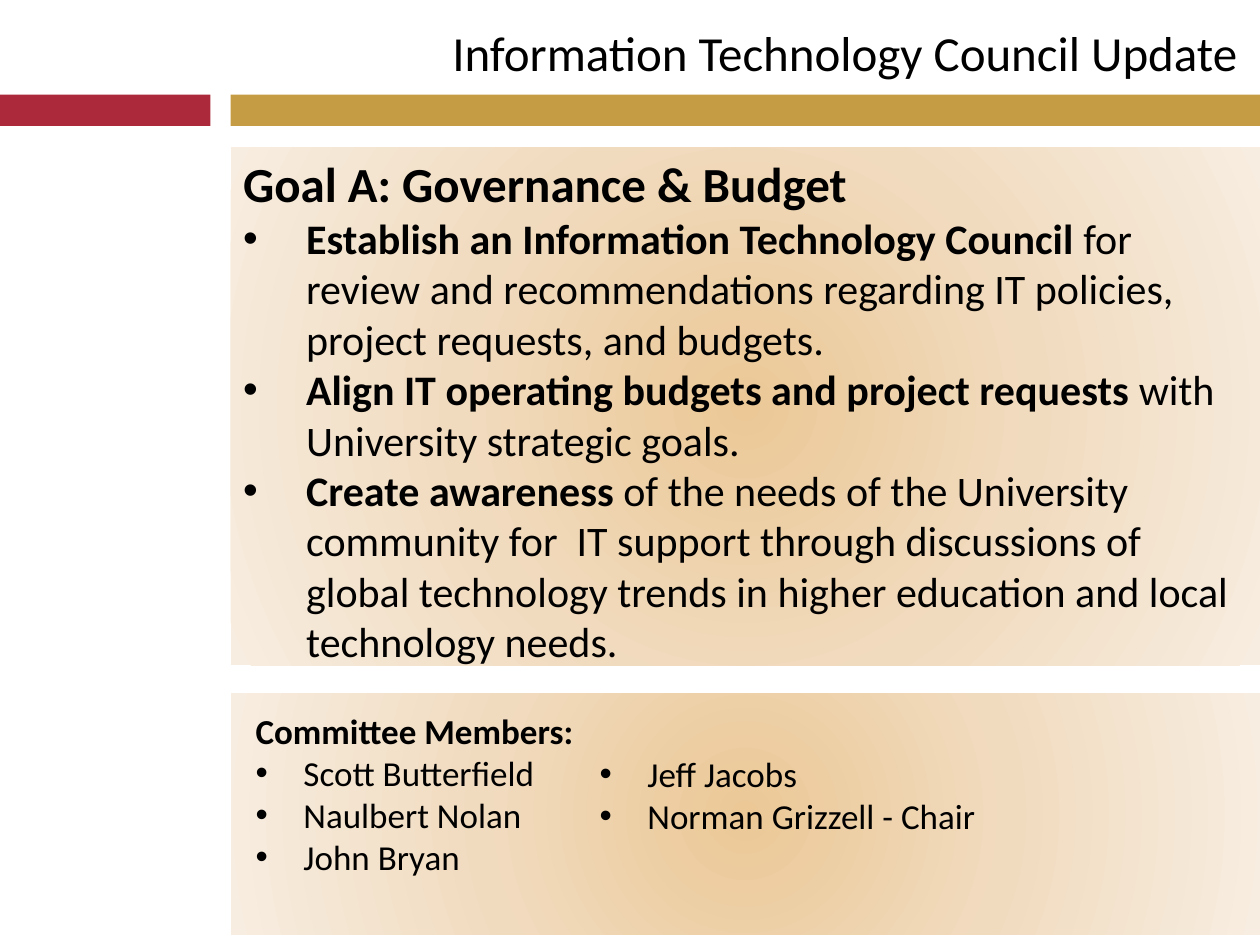
"""Build the Information Technology Council update slide."""
from pptx import Presentation
from pptx.dml.color import RGBColor
from pptx.enum.shapes import MSO_SHAPE
from pptx.enum.text import MSO_ANCHOR, MSO_AUTO_SIZE, PP_ALIGN
from pptx.oxml import parse_xml
from pptx.oxml.ns import nsdecls, qn
from pptx.util import Inches, Pt

TITLE = "Information Technology Council Update"
GOAL_HEADING = "Goal A: Governance & Budget"
GOALS = [
    ("Establish an Information Technology Council ",
     "for review and recommendations regarding IT policies, project requests, and budgets."),
    ("Align IT operating budgets and project requests ",
     "with University strategic goals."),
    ("Create awareness ",
     "of the needs of the University community for  IT support through discussions of "
     "global technology trends in higher education and local technology needs."),
]
MEMBERS_HEADING = "Committee Members:"
MEMBERS = [["Scott Butterfield", "Naulbert Nolan", "John Bryan"],
           ["Jeff Jacobs", "Norman Grizzell - Chair"]]

THEME = {
    "font": "Calibri", "text": "000000", "gold": "C59C44", "red": "AC283B",
    "glow": [(0, "EBC896"), (50, "F1DBBF"), (100, "F7EDE0")],
    "heading": 28, "goal": 24, "member": 20,
}
WIDTH, HEIGHT = 10, 7.5
MAIN_LEFT, RED_WIDTH = 1.83, 1.67
MAIN_WIDTH = WIDTH - MAIN_LEFT
BAR_TOP, BAR_HEIGHT = 0.75, 0.25
MEMBER_TOP, MEMBER_LINE, INSET = 5.58, 0.34, 0.05
MEMBER_COLUMNS = [(1.93, 2.75), (4.66, 3.21)]


def place(shape, left, top, width, height):
    for name, value in zip(("left", "top", "width", "height"), (left, top, width, height)):
        setattr(shape, name, Inches(value))


def add_rectangle(page, *area):
    shape = page.shapes.add_shape(MSO_SHAPE.RECTANGLE, *map(Inches, area))
    shape.shadow.inherit = False
    shape.line.fill.background()
    return shape


def add_bar(page, left, width, colour):
    bar = add_rectangle(page, left, BAR_TOP, width, BAR_HEIGHT)
    bar.fill.solid()
    bar.fill.fore_color.rgb = RGBColor.from_string(colour)


def fill_glow(shape):
    shape.fill.gradient()
    properties = shape.element.spPr
    stops = "".join(f'<a:gs pos="{position * 1000}"><a:srgbClr val="{colour}"/></a:gs>'
                    for position, colour in THEME["glow"])
    glow = parse_xml(
        f'<a:gradFill {nsdecls("a")} rotWithShape="1"><a:gsLst>{stops}</a:gsLst>'
        '<a:path path="circle"><a:fillToRect l="50000" t="50000" r="50000" b="50000"/>'
        '</a:path></a:gradFill>')
    properties.replace(properties.find(qn("a:gradFill")), glow)


def write(box, lines, wrap):
    """Write lines of (spans, size, indent), each span being (text, bold)."""
    frame = box.text_frame
    settings = {"word_wrap": wrap, "auto_size": MSO_AUTO_SIZE.SHAPE_TO_FIT_TEXT,
                "vertical_anchor": MSO_ANCHOR.TOP}
    for name, value in settings.items():
        setattr(frame, name, value)
    for number, (spans, size, indent) in enumerate(lines):
        para = frame.add_paragraph() if number else frame.paragraphs[0]
        para.space_before = Pt(0)
        para.alignment = PP_ALIGN.LEFT
        properties = para._p.get_or_add_pPr()
        properties.set("marL", str(Inches(indent)))
        properties.set("indent", str(-Inches(indent)))
        if indent:
            properties.append(parse_xml(f'<a:buFont {nsdecls("a")} typeface="Arial"/>'))
        bullet = 'buChar {} char="•"' if indent else "buNone {}"
        properties.append(parse_xml(f'<a:{bullet.format(nsdecls("a"))}/>'))
        for text, bold in spans:
            span = para.add_run()
            span.text = text
            formats = {"name": THEME["font"], "size": Pt(size), "bold": bold}
            for name, value in formats.items():
                setattr(span.font, name, value)
            span.font.color.rgb = RGBColor.from_string(THEME["text"])


def main():
    deck = Presentation()
    deck.slide_width, deck.slide_height = Inches(WIDTH), Inches(HEIGHT)
    page = deck.slides.add_slide(deck.slide_layouts[1])

    add_bar(page, MAIN_LEFT, MAIN_WIDTH, THEME["gold"])
    add_bar(page, 0, RED_WIDTH, THEME["red"])

    title = page.shapes.title
    place(title, 2.81, 0.13, 7.11, 0.57)
    write(title, [([(TITLE, False)], THEME["heading"], 0)], False)
    title.text_frame.paragraphs[0].alignment = PP_ALIGN.RIGHT

    goals = page.placeholders[1]
    place(goals, MAIN_LEFT, 1.17, MAIN_WIDTH, 4.21)
    fill_glow(goals)
    goal_lines = [([(lead, True), (rest, False)], THEME["goal"], 0.5) for lead, rest in GOALS]
    write(goals, [([(GOAL_HEADING, True)], THEME["heading"], 0)] + goal_lines, True)

    fill_glow(add_rectangle(page, MAIN_LEFT, 5.5, MAIN_WIDTH, 1.92))
    for column, ((left, width), names) in enumerate(zip(MEMBER_COLUMNS, MEMBERS)):
        lines = [([(name, False)], THEME["member"], 0.38) for name in names]
        if column == 0:
            lines.insert(0, ([(MEMBERS_HEADING, True)], THEME["member"], 0))
        top = MEMBER_TOP + column * MEMBER_LINE
        height = len(lines) * MEMBER_LINE + 2 * INSET
        box = page.shapes.add_textbox(*map(Inches, (left, top, width, height)))
        write(box, lines, False)

    deck.save("out.pptx")


if __name__ == "__main__":
    main()
